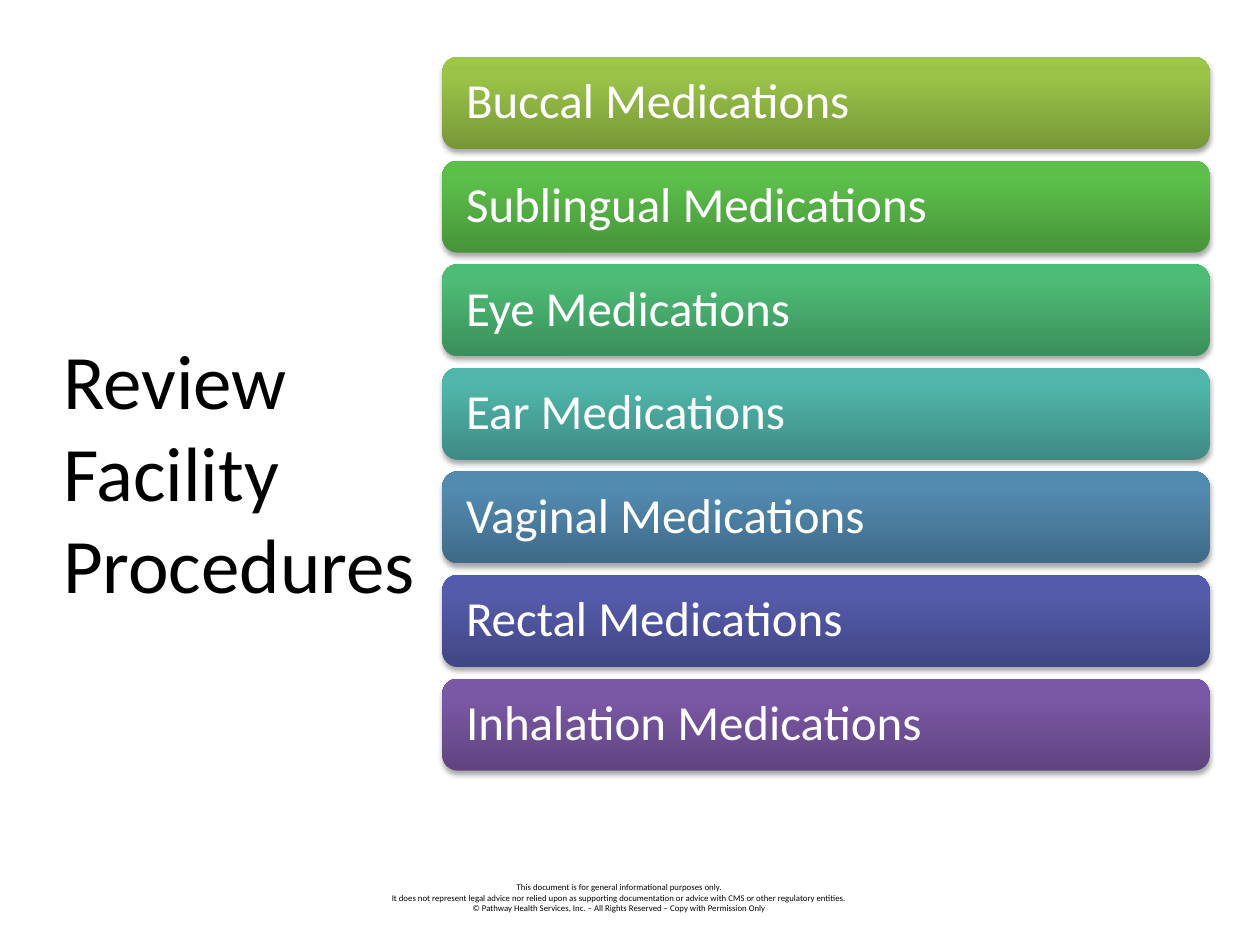
from copy import deepcopy
from dataclasses import dataclass

from pptx import Presentation
from pptx.dml.color import RGBColor
from pptx.enum import shapes, text
from pptx.oxml import parse_xml
from pptx.oxml.ns import nsdecls, qn
from pptx.slide import Slide
from pptx.util import Pt

FONT = "Calibri"
COLORS = {"black": "000000", "white": "FFFFFF"}


@dataclass
class Procedure:
    label: str
    gradient: tuple[str, str, str]  # bottom, 80 % of the way up, top


PROCEDURES = [
    Procedure("Buccal Medications", ("779737", "9BC348", "9DC746")),
    Procedure("Sublingual Medications", ("479339", "5CBF4A", "5BC249")),
    Procedure("Eye Medications", ("3B8F5A", "4DBA75", "4BBD75")),
    Procedure("Ear Medications", ("3D8B83", "50B5AA", "4EB8AC")),
    Procedure("Vaginal Medications", ("3F6A88", "528AB0", "518BB3")),
    Procedure("Rectal Medications", ("414684", "555BAB", "545AAE")),
    Procedure("Inhalation Medications", ("5F4480", "7B58A6", "7C57A8")),
]
DISCLAIMER = [
    "This document is for general informational purposes only.",
    "It does not represent legal advice nor relied upon as supporting "
    "documentation or advice with CMS or other regulatory entities.",
    "© Pathway Health Services, Inc. – All Rights Reserved – Copy with Permission Only",
]

BAR_LEFT, BAR_TOP, BAR_WIDTH, BAR_HEIGHT = 252.8, 32.6, 438.4, 52.6
BAR_PITCH = 59.2


def format_text(frame, size: float, color: str, align: text.PP_ALIGN) -> None:
    for para in frame.paragraphs:
        para.alignment = align
        for span in para.runs:
            span.font.name = FONT
            span.font.size = Pt(size)
            span.font.color.rgb = RGBColor.from_string(COLORS[color])


def fill_gradient(bar, colors: tuple[str, str, str]) -> None:
    bar.fill.gradient()
    bar.fill.gradient_angle = 90
    stop_list = bar.fill.gradient_stops
    stop_list[0].color.rgb = RGBColor.from_string(colors[0])
    stop_list[1].color.rgb = RGBColor.from_string(colors[2])
    stop_list[0].position, stop_list[1].position = 0, 1
    # The middle stop is a third element between the two defaults
    last = bar._element.spPr.findall(".//" + qn("a:gs"))[-1]
    last.addprevious(deepcopy(last))
    middle = bar.fill.gradient_stops[1]
    middle.position = 0.8
    middle.color.rgb = RGBColor.from_string(colors[1])


def add_shadow(bar) -> None:
    bar.shadow.inherit = False
    bar._element.spPr.find(qn("a:effectLst")).append(parse_xml(
        f'<a:outerShdw {nsdecls("a")} blurRad="{Pt(3.15)}" dist="{Pt(1.8)}" '
        f'dir="5400000" rotWithShape="0"><a:srgbClr val="{COLORS["black"]}">'
        '<a:alpha val="35000"/></a:srgbClr></a:outerShdw>'))


def add_bar(page: Slide, procedure: Procedure, top: float) -> None:
    bar = page.shapes.add_shape(
        shapes.MSO_SHAPE.ROUNDED_RECTANGLE,
        Pt(BAR_LEFT), Pt(top), Pt(BAR_WIDTH), Pt(BAR_HEIGHT))
    bar.line.fill.background()
    fill_gradient(bar, procedure.gradient)
    add_shadow(bar)
    frame = bar.text_frame
    frame.text = procedure.label
    frame.word_wrap = True
    frame.vertical_anchor = text.MSO_ANCHOR.MIDDLE
    frame.margin_left = frame.margin_right = Pt(11)
    frame.paragraphs[0].line_spacing = 0.9
    format_text(frame, 28, "white", text.PP_ALIGN.LEFT)


def add_title(page: Slide) -> None:
    title = page.shapes.title
    title.left, title.top, title.width, title.height = (
        Pt(28.8), Pt(127.5), Pt(224), Pt(283))
    frame = title.text_frame
    frame.text = "Review Facility Procedures"
    frame.word_wrap = True
    frame.auto_size = text.MSO_AUTO_SIZE.NONE
    frame.vertical_anchor = text.MSO_ANCHOR.MIDDLE
    format_text(frame, 44, "black", text.PP_ALIGN.LEFT)


def add_disclaimer(page: Slide) -> None:
    box = page.shapes.add_textbox(Pt(198), Pt(500.4), Pt(312), Pt(25.2))
    frame = box.text_frame
    frame.word_wrap = True
    frame.text = "\n".join(DISCLAIMER)
    format_text(frame, 5, "black", text.PP_ALIGN.CENTER)


def main() -> None:
    deck = Presentation()
    deck.slide_width, deck.slide_height = Pt(720), Pt(540)
    page = deck.slides.add_slide(deck.slide_layouts.get_by_name("Title Only"))

    # Footer and title
    add_disclaimer(page)
    add_title(page)

    # Stack of procedure bars
    for index, procedure in enumerate(PROCEDURES):
        add_bar(page, procedure, BAR_TOP + index * BAR_PITCH)

    deck.save("out.pptx")


if __name__ == "__main__":
    main()
